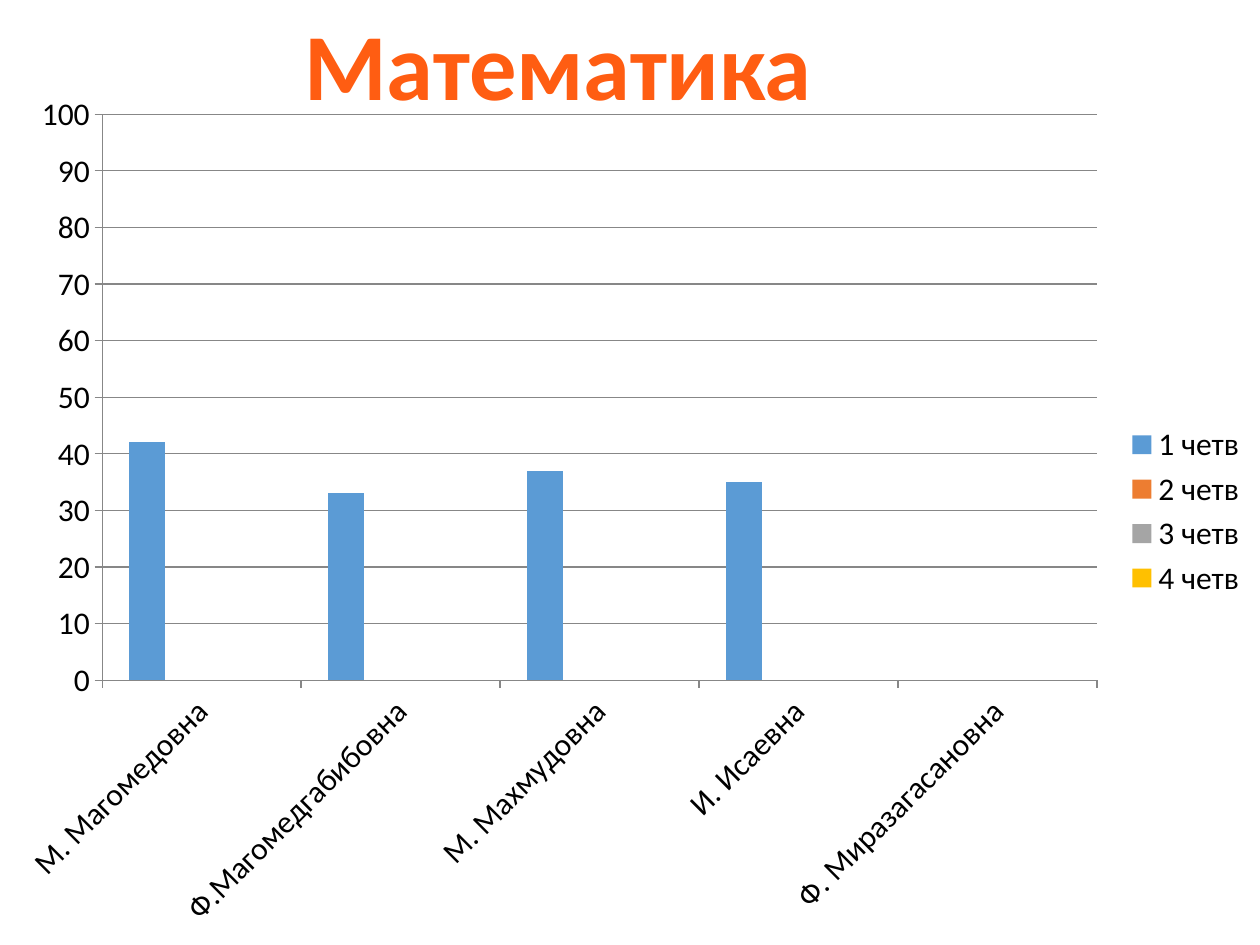
from dataclasses import dataclass

from pptx import Presentation
from pptx.chart.data import CategoryChartData
from pptx.dml.color import RGBColor
from pptx.enum.chart import XL_CHART_TYPE, XL_LEGEND_POSITION, XL_TICK_MARK
from pptx.enum.text import MSO_AUTO_SIZE, PP_ALIGN
from pptx.oxml.ns import qn
from pptx.util import Cm, Pt

CLUSTERED = XL_CHART_TYPE.COLUMN_CLUSTERED
LEGEND_RIGHT = XL_LEGEND_POSITION.RIGHT
OUTSIDE = XL_TICK_MARK.OUTSIDE
FIT_SHAPE = MSO_AUTO_SIZE.SHAPE_TO_FIT_TEXT
CENTER = PP_ALIGN.CENTER


@dataclass(frozen=True)
class Theme:
    """Colours and type sizes of the slide."""
    font: str = "Calibri"
    title_size: int = 54
    chart_size: int = 18
    title: str = "FF5D12"
    text: str = "000000"
    line: str = "878787"
    quarters: tuple = ("5B9BD5", "ED7D31", "A5A5A5", "FFC000")


THEME = Theme()
TEACHERS = ["М. Магомедовна", "Ф.Магомедгабибовна", "М. Махмудовна",
            "И. Исаевна", "Ф. Миразагасановна"]
EMPTY = [None] * len(TEACHERS)
SCORES = {"1 четв": [42, 33, 37, 35, None], "2 четв": EMPTY,
          "3 четв": EMPTY, "4 четв": EMPTY}


def rgb(value):
    """Turn a hex string into a colour."""
    return RGBColor.from_string(value)


def style_font(font, size, color, bold=False):
    """Apply the theme typeface with a size and colour."""
    font.name = THEME.font
    font.size = Pt(size)
    font.bold = bold
    font.color.rgb = rgb(color)


def style_line(line):
    """Apply the thin grey chart line."""
    line.color.rgb = rgb(THEME.line)
    line.width = Pt(0.75)


def add_score_chart(s, x, y, w, h):
    """Place the chart of scores by teacher and quarter in the box."""
    data = CategoryChartData()
    data.categories = TEACHERS
    for name, values in SCORES.items():
        data.add_series(name, values)
    chart = s.shapes.add_chart(CLUSTERED, x, y, w, h, data).chart
    style_font(chart.font, THEME.chart_size, THEME.text)
    chart.has_title = False
    chart.has_legend = True
    chart.legend.position = LEGEND_RIGHT
    chart.legend.include_in_layout = False

    plot = chart.plots[0]
    plot.gap_width = 150
    plot.overlap = 0
    plot.vary_by_categories = False
    for series, color in zip(plot.series, THEME.quarters):
        series.format.fill.solid()
        series.format.fill.fore_color.rgb = rgb(color)

    value_axis = chart.value_axis
    value_axis.minimum_scale = 0
    value_axis.maximum_scale = 100
    value_axis.major_unit = 10
    value_axis.has_major_gridlines = True
    style_line(value_axis.major_gridlines.format.line)
    for axis in (chart.category_axis, value_axis):
        axis.major_tick_mark = OUTSIDE
        style_line(axis.format.line)
        style_font(axis.tick_labels.font, THEME.chart_size, THEME.text)
    body = chart.category_axis._element.find(qn("c:txPr")).find(qn("a:bodyPr"))
    body.set("rot", str(-45 * 60000))


def add_title(s, x, y, w, h):
    """Place the subject heading in the box."""
    tf = s.shapes.add_textbox(x, y, w, h).text_frame
    tf.word_wrap = False
    tf.auto_size = FIT_SHAPE
    p = tf.paragraphs[0]
    p.text = "Математика"
    p.alignment = CENTER
    style_font(p.font, THEME.title_size, THEME.title, bold=True)


def main():
    """Build and save the slide."""
    prs = Presentation()
    prs.slide_width, prs.slide_height = Cm(25.4), Cm(19.05)
    s = prs.slides.add_slide(prs.slide_layouts[6])
    top = Cm(1.57)
    add_score_chart(s, 0, top, prs.slide_width, prs.slide_height - top)
    add_title(s, Cm(5.84), 0, Cm(10.82), Cm(2.57))
    prs.save("out.pptx")


if __name__ == "__main__":
    main()
